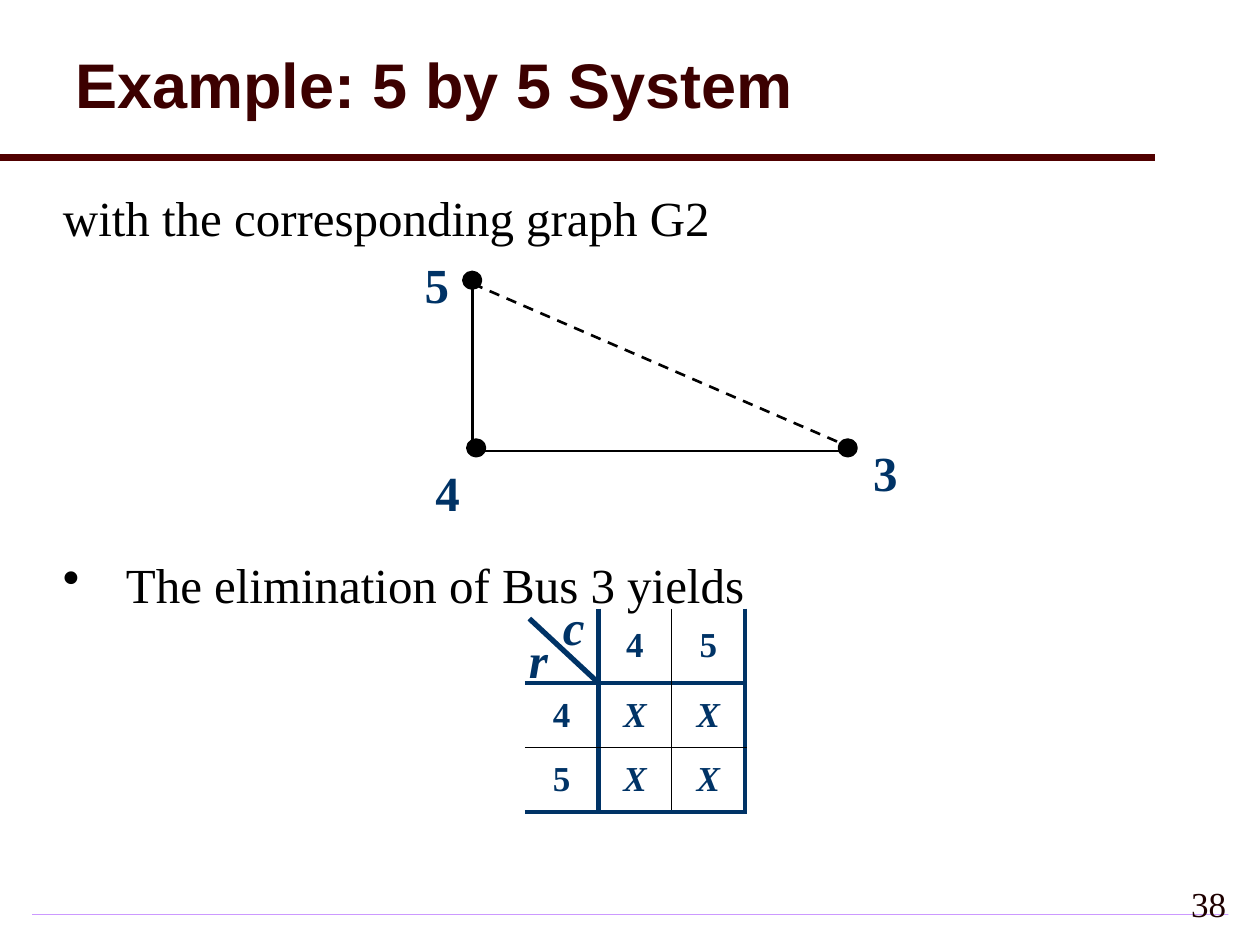
from lxml.etree import SubElement
from pptx import Presentation
from pptx.dml.color import RGBColor
from pptx.enum.dml import MSO_LINE
from pptx.enum.shapes import MSO_CONNECTOR, MSO_SHAPE
from pptx.enum.text import MSO_ANCHOR, PP_ALIGN
from pptx.oxml.ns import qn
from pptx.util import Cm, Pt

BLACK = RGBColor(0, 0, 0)
NAVY = RGBColor(0x00, 0x33, 0x66)
MAROON = RGBColor(0x50, 0x00, 0x00)
TITLE_COLOR = RGBColor(0x3C, 0x00, 0x00)
NUMBER_COLOR = RGBColor(0x1E, 0x00, 0x00)
LILAC = RGBColor(0xCC, 0x99, 0xFF)
PALE_LILAC = RGBColor(0xF3, 0xEB, 0xFF)
SERIF = "Times New Roman"


def style(paragraph, size, color, name=SERIF, bold=False, italic=False):
    """Set the font of a whole paragraph."""
    font = paragraph.font
    font.name, font.size, font.bold, font.italic = name, Pt(size), bold, italic
    font.color.rgb = color


def add_text(page, text, left, top, width, height, anchor=MSO_ANCHOR.TOP):
    """Add a wrapping text box and return its frame."""
    box = page.shapes.add_textbox(Cm(left), Cm(top), Cm(width), Cm(height))
    frame = box.text_frame
    frame.word_wrap = True
    frame.vertical_anchor = anchor
    if anchor == MSO_ANCHOR.TOP:
        frame.margin_top = Cm(0.23)
    frame.text = text
    return frame


def add_label(page, text, left, top, italic=False):
    """Add a one-letter bold label."""
    frame = add_text(page, text, left, top, 1.2, 1.45)
    frame.margin_right = 0
    style(frame.paragraphs[0], 28, NAVY, bold=True, italic=italic)


def add_line(page, start, end, color, width, dash=None):
    """Draw a straight line between two points."""
    line = page.shapes.add_connector(
        MSO_CONNECTOR.STRAIGHT, *(Cm(value) for value in (*start, *end)))
    line.line.color.rgb = color
    line.line.width = Pt(width)
    if dash:
        line.line.dash_style = dash
    SubElement(line._element.spPr, qn("a:effectLst"))


def add_node(page, left, top):
    """Draw a black graph node."""
    node = page.shapes.add_shape(MSO_SHAPE.OVAL, Cm(left), Cm(top), Cm(0.3), Cm(0.28))
    node.shadow.inherit = False
    node.fill.solid()
    node.fill.fore_color.rgb = BLACK
    node.line.color.rgb = BLACK
    node.line.width = Pt(3)


def add_footer_rule(page):
    """Draw the thin gradient bar above the page edge."""
    bar = page.shapes.add_shape(
        MSO_SHAPE.RECTANGLE, Cm(0.64), Cm(18.42), Cm(24.13), Cm(0.03))
    bar.shadow.inherit = False
    bar.line.fill.background()
    bar.fill.gradient()
    for stop, color in zip(bar.fill.gradient_stops, (LILAC, PALE_LILAC)):
        stop.color.rgb = color
    gradient = bar._element.spPr.find(qn("a:gradFill"))
    gradient.remove(gradient.find(qn("a:lin")))
    shading = SubElement(gradient, qn("a:path"))
    shading.set("path", "shape")
    SubElement(shading, qn("a:fillToRect"), dict.fromkeys("ltrb", "50000"))


def add_border(cell, side, edge, width):
    """Draw one cell side: edge 0 is bare, 2 is thin, the others are thick."""
    border = SubElement(cell._tc.get_or_add_tcPr(), qn(f"a:ln{side}"))
    if edge == 0:
        SubElement(border, qn("a:noFill"))
        return
    border.set("w", str(Pt(width if edge == 2 else 3)))
    fill = SubElement(border, qn("a:solidFill"))
    SubElement(fill, qn("a:srgbClr"), val=str(BLACK if edge == 2 else NAVY))


def add_matrix(page, rows):
    """Add the table of nonzero entries."""
    table = page.shapes.add_table(
        3, 3, Cm(10.58), Cm(12.27), Cm(4.44), Cm(4.1)).table
    table.first_row = table.horz_banding = False
    for column in table.columns:
        column.width = Cm(1.48)
    for row, height in zip(table.rows, (1.5, 1.3, 1.3)):
        row.height = Cm(height)
    for i, texts in enumerate(rows):
        for j, text in enumerate(texts):
            cell = table.cell(i, j)
            thin = 1 if i and j else 0.75
            for side, edge in (("L", j), ("R", j + 1), ("T", i), ("B", i + 1)):
                add_border(cell, side, edge, thin)
            cell.fill.background()
            cell.vertical_anchor = MSO_ANCHOR.MIDDLE
            cell.text = text
            paragraph = cell.text_frame.paragraphs[0]
            paragraph.alignment = PP_ALIGN.CENTER
            style(paragraph, 20, NAVY, bold=True, italic=text == "X")


def add_body(page):
    """Add the statement and the bullet below the graph."""
    frame = add_text(page, "with the corresponding graph G2", 1.02, 3.56, 22.91, 11.5)
    bullet = frame.add_paragraph()
    bullet.text = "The elimination of Bus 3 yields"
    bullet.space_before = Pt(176)
    properties = bullet._p.get_or_add_pPr()
    properties.set("marL", str(Cm(1.27)))
    properties.set("indent", str(Cm(-1.27)))
    SubElement(properties, qn("a:buChar"), char="•")
    for paragraph in frame.paragraphs:
        style(paragraph, 28, BLACK)


def add_graph(page):
    """Draw graph G2 with its labelled nodes."""
    top, corner = (9.53, 5.72), (9.53, 9.09)
    add_line(page, top, corner, BLACK, 1.5)
    add_line(page, corner, (17.09, 9.09), BLACK, 1.5)
    add_line(page, top, (17.15, 9.02), BLACK, 1.5, MSO_LINE.DASH)
    for position in ((9.37, 5.51), (9.45, 8.89), (16.94, 8.89)):
        add_node(page, *position)
    for text, left, label_top in (("5", 8.31, 4.9), ("4", 8.53, 9.09), ("3", 17.35, 8.69)):
        add_label(page, text, left, label_top)


def main():
    """Build and save the slide."""
    deck = Presentation()
    deck.slide_width, deck.slide_height = Cm(25.4), Cm(19.05)
    page = deck.slides.add_slide(deck.slide_layouts[6])
    add_footer_rule(page)
    add_line(page, (0, 3.18), (23.29, 3.18), MAROON, 4)
    title = add_text(page, "Example: 5 by 5 System", 1.27, 0.2, 22.23, 2.97,
                     MSO_ANCHOR.MIDDLE).paragraphs[0]
    style(title, 36, TITLE_COLOR, "Arial", bold=True)
    add_body(page)
    add_graph(page)
    add_matrix(page, [("", "4", "5"), ("4", "X", "X"), ("5", "X", "X")])
    add_label(page, "r", 10.41, 12.47, italic=True)
    add_label(page, "c", 11.1, 11.79, italic=True)
    add_line(page, (12.09, 13.79), (10.67, 12.47), NAVY, 3)
    number = add_text(page, "38", 19.69, 17.58, 5.28, 1.27,
                      MSO_ANCHOR.MIDDLE).paragraphs[0]
    number.alignment = PP_ALIGN.RIGHT
    style(number, 20, NUMBER_COLOR)
    deck.save("out.pptx")


if __name__ == "__main__":
    main()
